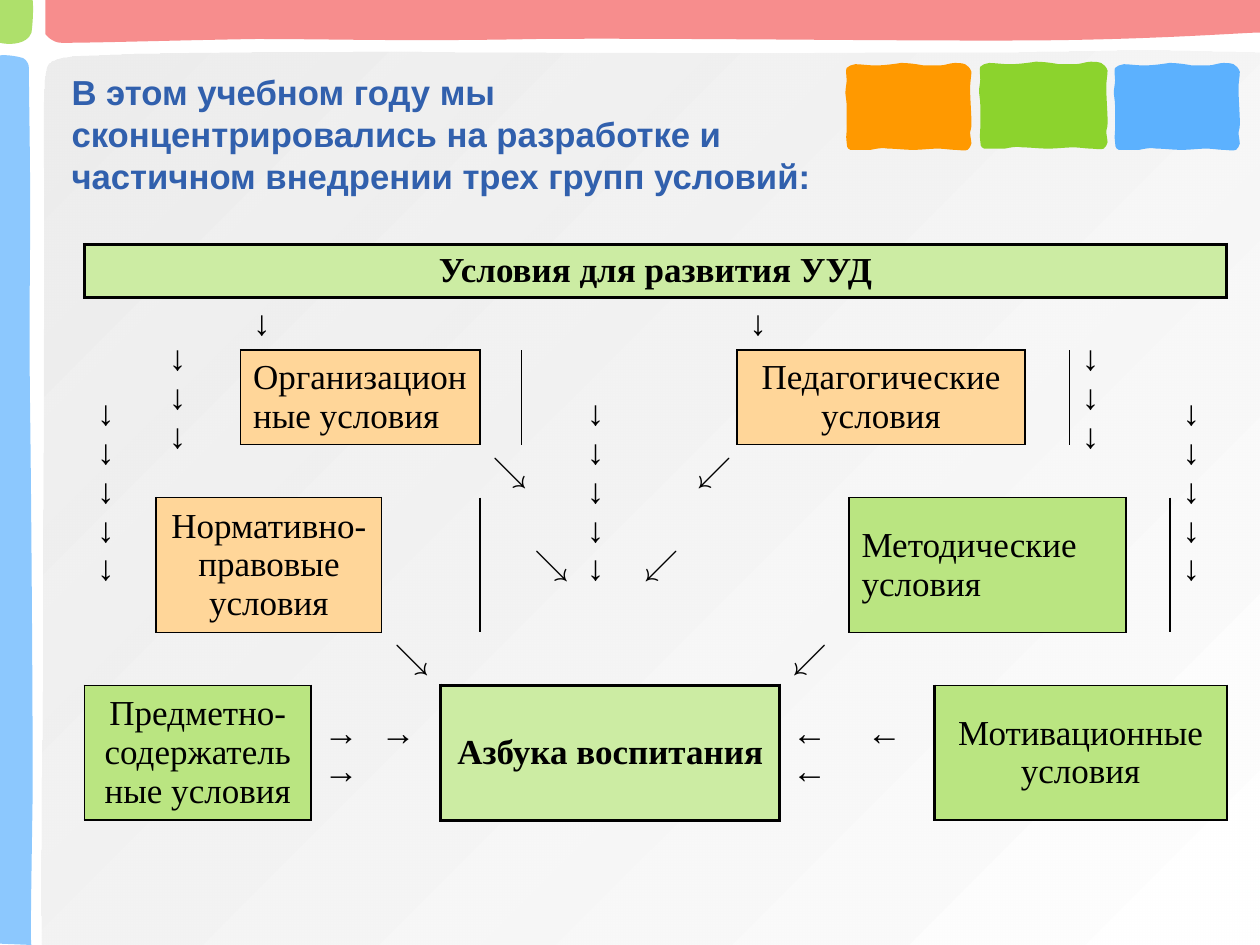
import pptx
import pptx.dml.color
import pptx.enum.text
import pptx.oxml
import pptx.oxml.ns
import pptx.util
from pptx.util import Inches

ALIGN = pptx.enum.text.PP_ALIGN
ANCHOR = pptx.enum.text.MSO_ANCHOR
qn = pptx.oxml.ns.qn
SERIF = "Times New Roman"
NO_GRID_STYLE = "{2D5ABB26-0587-4C30-8999-92F81FD0307C}"

# Outlines: a start point, then points (2 numbers) and curves (6 numbers)
PANEL = [
    (10, 7.5), (10, 0.42), (8.86, 0.38, 8.55, 0.42, 7.6, 0.42),
    (6.66, 0.42, 5.5, 0.43, 4.33, 0.42), (3.16, 0.41, 1.23, 0.41, 0.57, 0.45),
    (0.36, 0.48, 0.36, 0.49, 0.35, 0.73), (0.34, 0.96, 0.35, 1.1, 0.35, 1.82),
    (0.35, 2.56, 0.34, 4.12, 0.34, 5.06), (0.34, 6.01, 0.32, 6.62, 0.33, 7.5)]
TOP_BAND = [
    (10, 0), (10, 0.26), (10, 0.25, 9.28, 0.31, 8.32, 0.32),
    (7.36, 0.33, 5.31, 0.3, 4.26, 0.31), (3.21, 0.33, 2.65, 0.31, 2.03, 0.31),
    (1.4, 0.32, 0.77, 0.34, 0.49, 0.34), (0.41, 0.34, 0.36, 0.27, 0.36, 0.27),
    (0.36, 0.27, 0.36, 0.14, 0.36, 0)]
LEFT_BAND = [
    (0, 7.49), (0.25, 7.5), (0.24, 7.5, 0.25, 6.98, 0.26, 6.28),
    (0.26, 5.58, 0.25, 4.07, 0.24, 3.3), (0.23, 2.54, 0.24, 2.12, 0.24, 1.67),
    (0.24, 1.21, 0.23, 0.75, 0.23, 0.54), (0.23, 0.48, 0.18, 0.46, 0.18, 0.46),
    (0.07, 0.43, 0, 0.44, 0, 0.44)]
CORNER = [
    (0, 0), (0.26, 0), (0.27, 0.12, 0.25, 0.26, 0.25, 0.26),
    (0.23, 0.31, 0.19, 0.33, 0.15, 0.34), (0.07, 0.36, 0, 0.34, 0, 0.34)]
BLOCK = [
    (0.01, 0.04), (0.03, 0.02, 0.04, 0.02, 0.08, 0.01),
    (0.12, 0.01, 0.18, 0.02, 0.24, 0.02), (0.3, 0.02, 0.38, 0.01, 0.44, 0),
    (0.5, 0, 0.57, 0.01, 0.62, 0.02), (0.67, 0.02, 0.71, 0.02, 0.75, 0.02),
    (0.79, 0.02, 0.83, 0, 0.87, 0), (0.9, 0, 0.92, 0, 0.95, 0.01),
    (0.97, 0.02, 0.99, 0.04, 1, 0.07), (1, 0.11, 0.99, 0.14, 0.99, 0.21),
    (0.99, 0.27, 1, 0.41, 1, 0.46), (1, 0.51, 1, 0.52, 0.99, 0.55),
    (0.99, 0.58, 1, 0.62, 1, 0.64), (0.99, 0.66, 0.99, 0.68, 0.97, 0.69),
    (0.95, 0.7, 0.9, 0.69, 0.87, 0.69), (0.83, 0.69, 0.79, 0.68, 0.73, 0.68),
    (0.68, 0.68, 0.6, 0.69, 0.54, 0.69), (0.47, 0.69, 0.4, 0.68, 0.34, 0.68),
    (0.29, 0.67, 0.25, 0.68, 0.2, 0.69), (0.15, 0.69, 0.07, 0.69, 0.04, 0.69),
    (0.01, 0.68, 0.01, 0.65, 0.01, 0.63), (0, 0.6, 0.01, 0.58, 0.01, 0.53),
    (0.01, 0.48, 0.01, 0.39, 0.01, 0.34), (0.01, 0.29, 0, 0.27, 0, 0.24),
    (0, 0.2, 0.01, 0.17, 0.01, 0.14), (0.01, 0.1, 0, 0.06, 0.01, 0.04)]

COLUMNS = [0.29, 0.28, 0.39, 0.28, 0.28, 0.28, 0.28, 0.28, 0.34, 0.13, 0.31, 0.33, 0.42,
           0.45, 0.42, 0.42, 0.34, 0.55, 0.34, 0.34, 0.36, 0.36, 0.35, 0.45, 0.35, 0.45]
ROWS = [0.42, 0.42, 0.75, 0.42, 1.07, 0.42, 1.07]

# Boxes: row, column, columns spanned, text, fill, border width, alignment
BOXES = [
    (0, 0, 26, "Условия для развития УУД", "CCECA3", 2, ALIGN.CENTER),
    (2, 4, 7, "Организационные условия", "FFD699", 1, ALIGN.LEFT),
    (2, 16, 6, "Педагогические\nусловия", "FFD699", 1, ALIGN.CENTER),
    (4, 2, 6, "Нормативно-правовые условия", "FFD699", 1, ALIGN.CENTER),
    (4, 18, 6, "Методические условия", "BAE581", 1, ALIGN.LEFT),
    (6, 0, 6, "Предметно-содержательные условия", "BAE581", 1, ALIGN.CENTER),
    (6, 10, 7, "Азбука воспитания", "CCECA3", 2, ALIGN.CENTER),
    (6, 20, 6, "Мотивационные условия", "BAE581", 1, ALIGN.CENTER)]

# Arrows: row, column, rows spanned, columns spanned, text, right margin
ARROWS = [
    (1, 4, 1, 7, "↓", 0.1), (1, 16, 1, 6, "↓", 0.1),
    (3, 11, 1, 1, "↘", 0.1), (3, 15, 1, 1, "↙", 0.1),
    (4, 12, 1, 1, "↘", 0.1), (4, 14, 1, 1, "↙", 0.1),
    (5, 8, 1, 2, "↘", 0.1), (5, 17, 1, 1, "↙", 0.1),
    (6, 6, 1, 4, "→ → →", 0.2), (6, 17, 1, 3, "← ← ←", 0.26)]
ARROWS += [(1, column, count, 1, "\n".join("↓" * count), 0.1)
           for column, count in ((0, 5), (2, 3), (13, 5), (23, 3), (25, 5))]

# Empty merged cells: row, first column, last column
GAPS = [(3, 9, 10), (4, 8, 10), (4, 16, 17)]


def color(value):
    return pptx.dml.color.RGBColor.from_string(value)


def bend_curves(shape, outline):
    """Join each three segments that belong to a curve into one Bezier."""
    segments = iter(list(shape._element.iter(qn("a:lnTo"))))
    for part in outline[1:]:
        first = next(segments)
        if len(part) == 6:
            first.tag = qn("a:cubicBezTo")
            for _ in range(2):
                extra = next(segments)
                first.append(extra[0])
                extra.getparent().remove(extra)


def add_outline(slide, outline, colors, opacity=100, left=0, top=0, stretch=1):
    points = [(Inches(left + part[i] * stretch), Inches(top + part[i + 1]))
              for part in outline for i in range(0, len(part), 2)]
    builder = slide.shapes.build_freeform(*points[0])
    builder.add_line_segments(points[1:], close=True)
    shape = builder.convert_to_shape()
    bend_curves(shape, outline)
    shape.shadow.inherit = False
    shape.line.fill.background()
    if len(colors) == 1:
        shape.fill.solid()
        shape.fill.fore_color.rgb = color(colors[0])
    else:
        shape.fill.gradient()
        shape.fill.gradient_angle = 315
        for stop, value in zip(shape.fill.gradient_stops, colors):
            stop.color.rgb = color(value)
    if opacity < 100:
        first_color = next(shape._element.iter(qn("a:srgbClr")))
        first_color.append(pptx.oxml.parse_xml(
            f'<a:alpha {pptx.oxml.ns.nsdecls("a")} val="{opacity * 1000}"/>'))


def format_text(text_frame, font_name, size, value, bold, alignment):
    for paragraph in text_frame.paragraphs:
        paragraph.alignment = alignment
        for run in paragraph.runs:
            run.font.name = font_name
            run.font.size = pptx.util.Pt(size)
            run.font.bold = bold
            run.font.color.rgb = color(value)


def add_title(slide, text):
    box = slide.shapes.add_textbox(Inches(0.47), Inches(0.51), Inches(6.36), Inches(1.1))
    box.text_frame.word_wrap = True
    box.text_frame.vertical_anchor = ANCHOR.MIDDLE
    box.text_frame.text = text
    format_text(box.text_frame, "Arial", 19.8, "3160AD", True, ALIGN.LEFT)


def add_grid(slide):
    frame = slide.shapes.add_table(len(ROWS), len(COLUMNS), Inches(0.67), Inches(1.94),
                                   Inches(sum(COLUMNS)), Inches(sum(ROWS)))
    table = frame.table
    table.first_row = table.horz_banding = False
    table._tbl.tblPr.find(qn("a:tableStyleId")).text = NO_GRID_STYLE
    for column, width in zip(table.columns, COLUMNS):
        column.width = Inches(width)
    for row, height in zip(table.rows, ROWS):
        row.height = Inches(height)
    for cell in table.iter_cells():
        cell.fill.background()
        cell.margin_left = cell.margin_right = 0
        cell.margin_top = cell.margin_bottom = 0
    for row, first, last in GAPS:
        table.cell(row, first).merge(table.cell(row, last))
    return table


def set_borders(cell, sides, width):
    properties = cell._tc.get_or_add_tcPr()
    for index, side in enumerate(sides):
        properties.insert(index, pptx.oxml.parse_xml(
            f'<a:ln{side} {pptx.oxml.ns.nsdecls("a")} w="{pptx.util.Pt(width)}">'
            '<a:solidFill><a:srgbClr val="000000"/></a:solidFill>'
            f'</a:ln{side}>'))


def fill_cell(table, row, column, height, width, text, bold, alignment):
    cell = table.cell(row, column)
    if height * width > 1:
        cell.merge(table.cell(row + height - 1, column + width - 1))
    cell.vertical_anchor = ANCHOR.MIDDLE
    cell.margin_left = cell.margin_right = Inches(0.1)
    cell.text_frame.text = text
    format_text(cell.text_frame, SERIF, 20, "000000", bold, alignment)
    return cell


def add_box(table, row, column, width, text, fill, border, alignment):
    cell = fill_cell(table, row, column, 1, width, text, border == 2, alignment)
    cell.fill.solid()
    cell.fill.fore_color.rgb = color(fill)
    end = column + width
    for position in range(column, end):
        set_borders(table.cell(row, position), "LRTB", border)
    if end < len(COLUMNS):
        set_borders(table.cell(row, end), "L", border)


def main():
    presentation = pptx.Presentation()
    presentation.slide_width, presentation.slide_height = Inches(10), Inches(7.5)
    slide = presentation.slides.add_slide(presentation.slide_layouts[6])

    # Background decoration
    add_outline(slide, PANEL, ["E6E6E6", "FFFFFF"], 70)
    add_outline(slide, TOP_BAND, ["F45E5E"], 70)
    add_outline(slide, LEFT_BAND, ["5CB1FE"], 70)
    add_outline(slide, CORNER, ["8CD32D"], 70)
    for left, top, stretch, fill in ((6.71, 0.5, 1, "FF9900"), (8.84, 0.5, 1, "5CB1FE"),
                                     (7.77, 0.49, 1.02, "8CD32D")):
        add_outline(slide, BLOCK, [fill], left=left, top=top, stretch=stretch)

    # Title
    add_title(slide, "В этом учебном году мы сконцентрировались на разработке и "
                     "частичном внедрении трех групп условий:")

    # Scheme of conditions
    table = add_grid(slide)
    for box in BOXES:
        add_box(table, *box)
    for row, column, height, width, text, margin in ARROWS:
        cell = fill_cell(table, row, column, height, width, text, False, ALIGN.JUSTIFY)
        cell.margin_right = Inches(margin)

    presentation.save("out.pptx")


if __name__ == "__main__":
    main()
